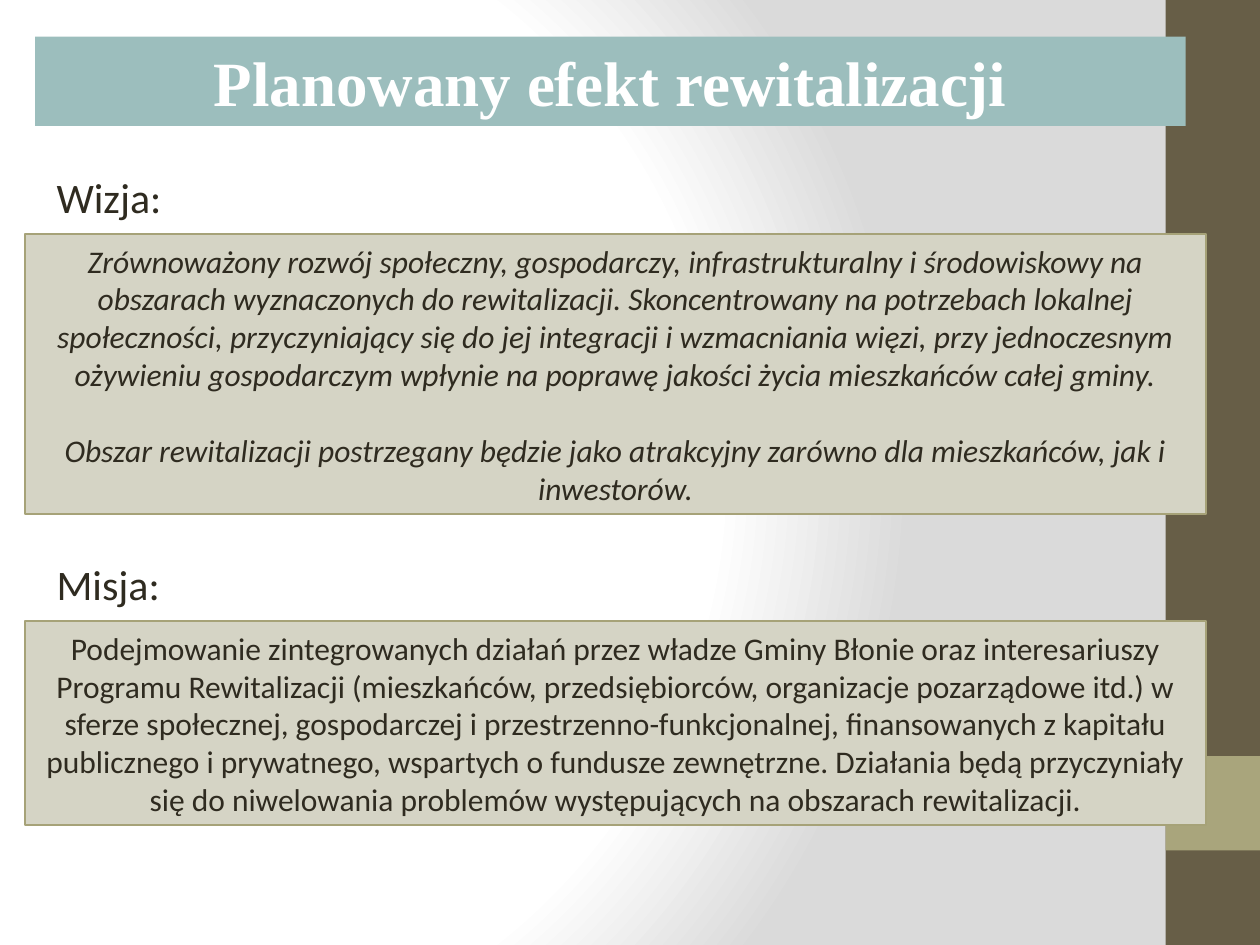
from dataclasses import dataclass

from pptx import Presentation, oxml
from pptx import util as u
from pptx.dml.color import RGBColor
from pptx.enum import shapes, text
from pptx.oxml import ns


@dataclass(frozen=True)
class Theme:
    ink: str = "2F2B20"
    white: str = "FFFFFF"
    gray: str = "DADADA"
    brown: str = "675E47"
    olive: str = "A9A57C"
    teal: str = "9CBEBD"
    sand: str = "D5D4C5"
    edge: str = "A6A278"
    serif: str = "Times New Roman"
    sans: str = "Calibri"
    title: int = 36
    head: int = 24
    body: int = 18


THEME = Theme()
TITLE = dict(name=THEME.serif, size=u.Pt(THEME.title), bold=True)
HEAD = dict(name=THEME.sans, size=u.Pt(THEME.head))
BODY = dict(name=THEME.sans, size=u.Pt(THEME.body))

LEFT, WIDTH = 0.2, 9.37
GAP = 0.55  # from the top of a heading to the top of its panel

VISION = [
    "Zrównoważony rozwój społeczny, gospodarczy, infrastrukturalny i środowiskowy "
    "na obszarach wyznaczonych do rewitalizacji. Skoncentrowany na potrzebach "
    "lokalnej społeczności, przyczyniający się do jej integracji i wzmacniania "
    "więzi, przy jednoczesnym ożywieniu gospodarczym wpłynie na poprawę jakości "
    "życia mieszkańców całej gminy.",
    "Obszar rewitalizacji postrzegany będzie jako atrakcyjny zarówno dla "
    "mieszkańców, jak i inwestorów.",
]
MISSION = [
    "Podejmowanie zintegrowanych działań przez władze Gminy Błonie oraz "
    "interesariuszy Programu Rewitalizacji (mieszkańców, przedsiębiorców, "
    "organizacje pozarządowe itd.) w sferze społecznej, gospodarczej i "
    "przestrzenno-funkcjonalnej, finansowanych z kapitału publicznego i "
    "prywatnego, wspartych o fundusze zewnętrzne. Działania będą przyczyniały "
    "się do niwelowania problemów występujących na obszarach rewitalizacji.",
]


def rgb(code):
    return RGBColor.from_string(code)


def paint_back(slide):
    """Give the slide a round fade from white to gray."""
    slide.background.fill.solid()
    solid = slide.element.xpath(".//p:bgPr/a:solidFill")[0]
    stops = [(0, THEME.white), (75, THEME.white), (100, THEME.gray)]
    marks = "".join(
        f'<a:gs pos="{pos * 1000}"><a:srgbClr val="{code}"/></a:gs>'
        for pos, code in stops
    )
    fade = oxml.parse_xml(
        f'<a:gradFill {ns.nsdecls("a")} rotWithShape="1"><a:gsLst>{marks}</a:gsLst>'
        '<a:path path="circle"><a:fillToRect l="20000" t="50000" r="100000" '
        'b="50000"/></a:path></a:gradFill>'
    )
    solid.getparent().replace(solid, fade)


def add_rect(slide, box, fill, edge=None):
    rect = slide.shapes.add_shape(
        shapes.MSO_SHAPE.RECTANGLE, *map(u.Inches, box)
    )
    rect.shadow.inherit = False
    rect.fill.solid()
    rect.fill.fore_color.rgb = rgb(fill)
    if edge:
        rect.line.color.rgb = rgb(edge)
        rect.line.width = u.Pt(1)
    else:
        rect.line.fill.background()
    return rect


def write(shape, lines, style, color, align, gap=0):
    """Fill a shape with paragraphs that stand gap points apart."""
    frame = shape.text_frame
    frame.word_wrap = True
    frame.auto_size = text.MSO_AUTO_SIZE.SHAPE_TO_FIT_TEXT
    for i, line in enumerate(lines):
        para = frame.add_paragraph() if i else frame.paragraphs[0]
        para.alignment = align
        para.space_before = u.Pt(gap if i else 0)
        run = para.add_run()
        run.text = line
        for key, val in style.items():
            setattr(run.font, key, val)
        run.font.color.rgb = rgb(color)


def add_part(slide, head, lines, top, wide, high, **extra):
    """Add a heading with its text panel below."""
    label = slide.shapes.add_textbox(*map(u.Inches, (0.35, top, wide, 0.5)))
    write(label, [head], HEAD, THEME.ink, text.PP_ALIGN.LEFT)
    box = (LEFT, top + GAP, WIDTH, high)
    panel = add_rect(slide, box, THEME.sand, THEME.edge)
    write(panel, lines, BODY | extra, THEME.ink, text.PP_ALIGN.CENTER, gap=22)


def main():
    deck = Presentation()
    deck.slide_width, deck.slide_height = u.Inches(10), u.Inches(7.5)
    slide = deck.slides.add_slide(deck.slide_layouts[6])
    paint_back(slide)
    add_rect(slide, (9.25, 0, 0.75, 7.5), THEME.brown)
    add_rect(slide, (9.25, 6, 0.75, 0.75), THEME.olive)
    title = add_rect(slide, (0.28, 0.29, 9.13, 0.71), THEME.teal)
    write(title, ["Planowany efekt rewitalizacji"], TITLE, THEME.white,
          text.PP_ALIGN.CENTER)
    add_part(slide, "Wizja:", VISION, 1.31, 8.11, 2.22, italic=True)
    add_part(slide, "Misja:", MISSION, 4.38, 5.35, 1.62)
    deck.save("out.pptx")


if __name__ == "__main__":
    main()
